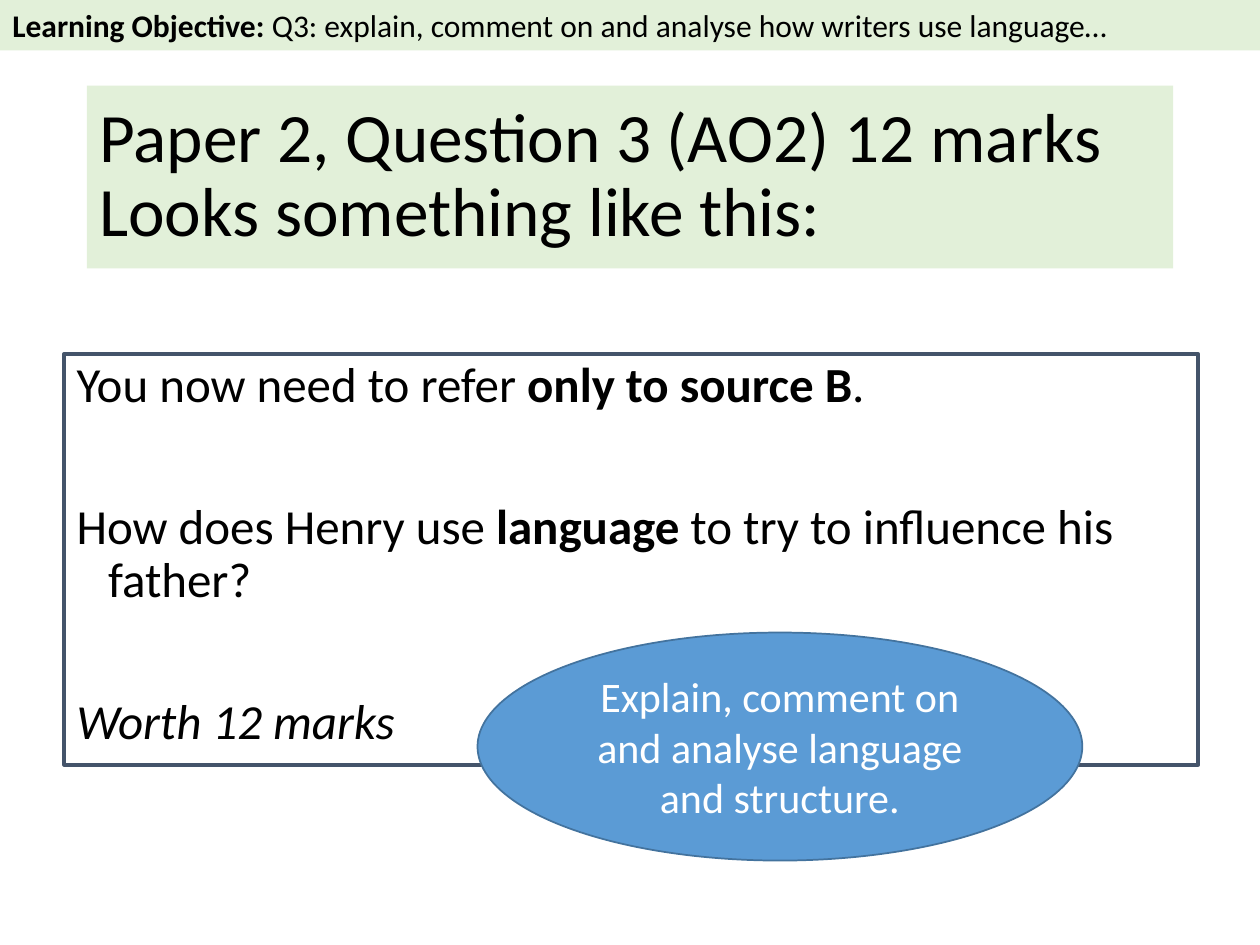
from pptx import Presentation
from pptx.dml.color import RGBColor
from pptx.enum.shapes import MSO_SHAPE as Shape
from pptx.enum.text import MSO_ANCHOR as Anchor, PP_ALIGN as Align
from pptx.util import Inches, Pt

BLACK = RGBColor(0x00, 0x00, 0x00)
WHITE = RGBColor(0xFF, 0xFF, 0xFF)
PALE_GREEN = RGBColor(0xE2, 0xF0, 0xD9)
SLATE = RGBColor(0x44, 0x54, 0x6A)
BLUE = RGBColor(0x5B, 0x9B, 0xD5)
DARK_BLUE = RGBColor(0x43, 0x73, 0x9E)

COLUMNS, ROWS = 100, 75


class LessonSlide:
    """Holds the style and the current slide; places are in grid cells."""

    font_name = "Calibri"
    line_spacing = 0.9

    def __init__(self, deck):
        self.cell_width = deck.slide_width / COLUMNS
        self.cell_height = deck.slide_height / ROWS
        self.slide = deck.slides.add_slide(deck.slide_layouts[6])

    def panel(self, column, row, columns, rows, kind=Shape.RECTANGLE,
              fill=None, line=None, line_width=1, anchor=Anchor.TOP):
        """Add a shape and return its text frame."""
        box = self.slide.shapes.add_shape(
            kind,
            round(column * self.cell_width), round(row * self.cell_height),
            round(columns * self.cell_width), round(rows * self.cell_height))
        box.shadow.inherit = False
        if fill is None:
            box.fill.background()
        else:
            box.fill.solid()
            box.fill.fore_color.rgb = fill
        if line is None:
            box.line.fill.background()
        else:
            box.line.color.rgb = line
            box.line.width = Pt(line_width)
        frame = box.text_frame
        frame.word_wrap = True
        frame.vertical_anchor = anchor
        return frame

    def format_span(self, span, size, color=BLACK, style="plain"):
        """Set the font of one run."""
        span.font.name = self.font_name
        span.font.size = Pt(size)
        span.font.color.rgb = color
        span.font.bold = style == "bold"
        span.font.italic = style == "italic"

    def add_spans(self, para, pieces, size, color=BLACK, align=Align.LEFT):
        """Fill a paragraph with (text, style) pieces."""
        para.alignment = align
        for text, style in pieces:
            span = para.add_run()
            span.text = text
            self.format_span(span, size, color, style)

    def title(self, frame, lines, size):
        """Set a heading whose lines share one paragraph."""
        para = frame.paragraphs[0]
        para.line_spacing = self.line_spacing
        para.alignment = Align.LEFT
        para.text = "\v".join(lines)
        for span in para.runs:
            self.format_span(span, size)

    def hanging_paragraphs(self, frame, paragraphs, size, first_gap, gap):
        """Set paragraphs with a hanging indent and wide gaps."""
        for index, pieces in enumerate(paragraphs):
            para = frame.add_paragraph() if index else frame.paragraphs[0]
            para.line_spacing = self.line_spacing
            para.space_before = Pt(gap if index else first_gap)
            self.add_spans(para, pieces, size)
            properties = para._p.get_or_add_pPr()
            properties.set("marL", str(Inches(0.25)))
            properties.set("indent", str(Inches(-0.25)))


def main():
    deck = Presentation()
    deck.slide_width, deck.slide_height = Inches(10), Inches(7.5)
    lesson = LessonSlide(deck)

    # Heading
    heading = lesson.panel(6.9, 6.8, 86.2, 14.5, fill=PALE_GREEN,
                           anchor=Anchor.MIDDLE)
    lesson.title(heading, ["Paper 2, Question 3 (AO2) 12 marks",
                           "Looks something like this:"], size=39.6)

    # Learning objective strip
    objective = lesson.panel(0, 0, COLUMNS, 4, fill=PALE_GREEN)
    lesson.add_spans(objective.paragraphs[0], [
        ("Learning Objective: ", "bold"),
        ("Q3: explain, comment on and analyse how writers use language…",
         "plain"),
    ], size=18)

    # Exam question
    question = lesson.panel(5.1, 28.1, 90, 32.6, line=SLATE, line_width=2.25)
    lesson.hanging_paragraphs(question, [
        [("You now need to refer ", "plain"), ("only to source B", "bold"),
         (".", "plain")],
        [("How does Henry use ", "plain"), ("language", "bold"),
         (" to try to influence his father?", "plain")],
        [("Worth 12 marks", "italic")],
    ], size=28, first_gap=10, gap=50.8)

    # Skills bubble
    bubble = lesson.panel(37.9, 50.2, 48, 18.1, kind=Shape.OVAL, fill=BLUE,
                          line=DARK_BLUE, anchor=Anchor.MIDDLE)
    lesson.add_spans(bubble.paragraphs[0], [
        ("Explain, comment on and analyse language and structure.", "plain"),
    ], size=24, color=WHITE, align=Align.CENTER)

    deck.save("out.pptx")


if __name__ == "__main__":
    main()
